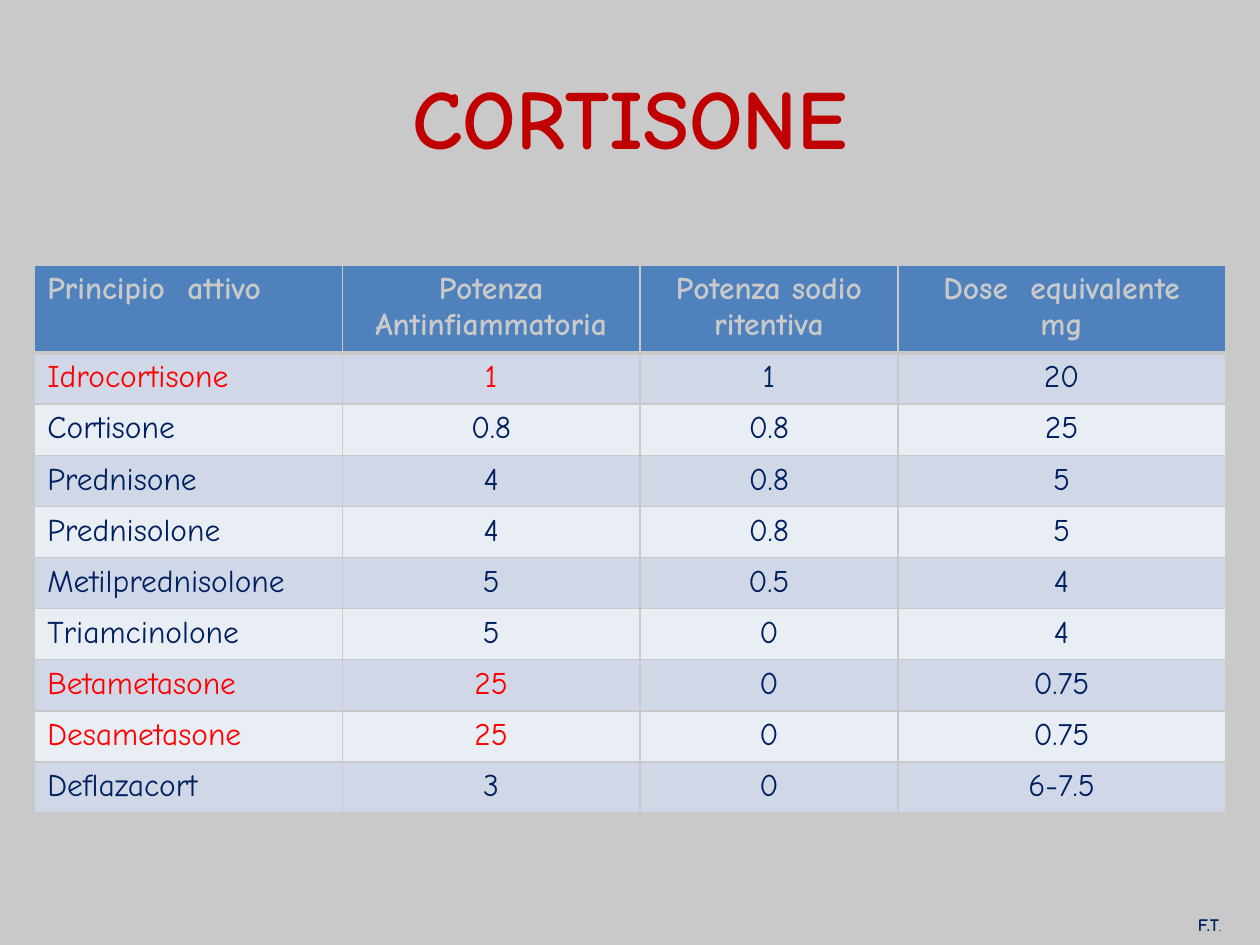
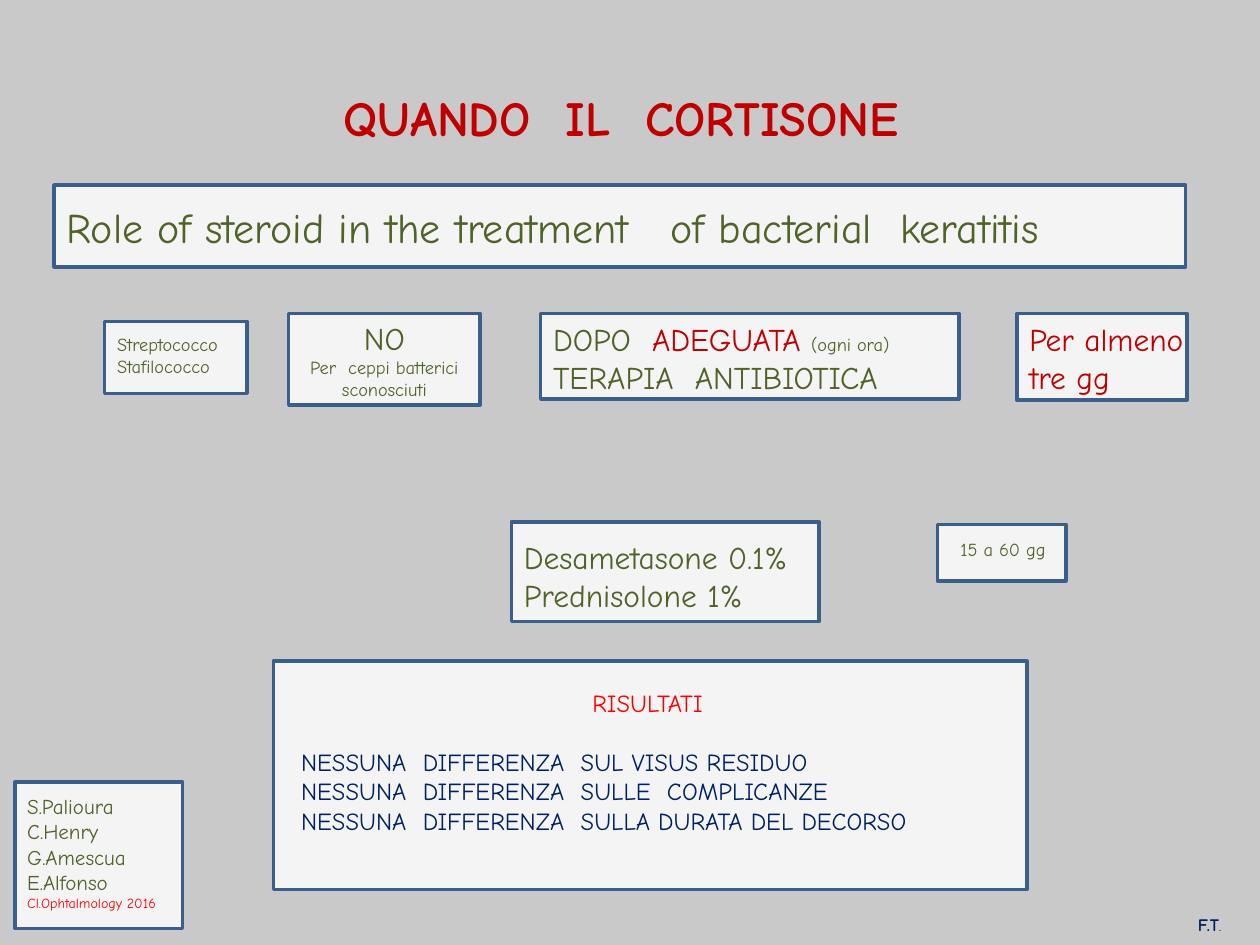
import lxml.etree
import pptx
import pptx.dml.color
import pptx.enum.shapes
import pptx.enum.text
import pptx.oxml.ns
import pptx.util

Cm = pptx.util.Cm
Pt = pptx.util.Pt
Align = pptx.enum.text.PP_ALIGN
Anchor = pptx.enum.text.MSO_ANCHOR
qn = pptx.oxml.ns.qn

FONT = "Comic Neue"
GREY, PALE, EDGE = "C9C9C9", "F4F4F4", "3A5F8C"
NAVY, GREEN, BRICK, RED, BLACK = "002060", "4F6228", "C00000", "FF0000", "000000"
HEAD, BANDS = "4F81BD", ("D0D8E8", "E9EDF4")

FOOT = [[("F.T", 10, NAVY, True), (".", 8, BLACK)]]

TITLES = [
    ("CORTISONE", 48, (7.11, 1.19, 11.18, 2.31)),
    ("QUANDO  IL  CORTISONE ", 28, (5.38, 1.63, 14.63, 1.45)),
]

DRUGS = [
    ("Principio  attivo", "Potenza Antinfiammatoria",
     "Potenza sodio ritentiva", "Dose  equivalente\nmg"),
    ("Idrocortisone", "1", "1", "20"),
    ("Cortisone", "0.8", "0.8", "25"),
    ("Prednisone", "4", "0.8", "5"),
    ("Prednisolone", "4", "0.8", "5"),
    ("Metilprednisolone", "5", "0.5", "4"),
    ("Triamcinolone", "5", "0", "4"),
    ("Betametasone", "25", "0", "0.75"),
    ("Desametasone", "25", "0", "0.75"),
    ("Deflazacort", "3", "0", "6-7.5"),
]
HOT = {"Idrocortisone", "Betametasone", "Desametasone"}
WIDTHS = (6.2, 6, 5.2, 6.6)
TALL, LOW = 1.75, 1.03


def plain(size, color, *lines):
    return [[(line, size, color)] for line in lines]


CARDS = [
    {"at": (0.3, 15.77, 3.38, 2.95), "top": 0.23,
     "text": plain(12, GREEN, "S.Palioura", "C.Henry", "G.Amescua", "E.Alfonso")
     + plain(8, RED, "Cl.Ophtalmology 2016")},
    {"at": (1.09, 3.73, 22.81, 1.65), "top": 0.33,
     "text": plain(24, GREEN,
                   "Role of steroid in the treatment   of bacterial  keratitis")},
    {"at": (2.11, 6.48, 2.87, 1.45), "top": 0.23,
     "text": plain(10.5, GREEN, "Streptococco", "Stafilococco")},
    {"at": (5.82, 6.32, 3.86, 1.85), "right": 0.25,
     "anchor": Anchor.MIDDLE, "mid": 3,
     "text": plain(18, GREEN, "NO")
     + plain(10.5, GREEN, "Per  ceppi batterici", "sconosciuti")},
    {"at": (10.9, 6.32, 8.43, 1.73),
     "text": [[("DOPO  ", 18, GREEN), ("ADEGUATA ", 18, BRICK),
               ("(ogni ora)", 10.5, GREEN)],
              [("TERAPIA  ANTIBIOTICA", 18, GREEN)]]},
    {"at": (20.5, 6.32, 3.43, 1.75),
     "text": plain(18, BRICK, "Per almeno", "tre gg")},
    {"at": (10.31, 10.52, 6.2, 2.01), "top": 0.33,
     "text": plain(18, GREEN, "Desametasone 0.1%", "Prednisolone 1%")},
    {"at": (18.9, 10.57, 2.59, 1.14), "left": 0.46, "top": 0.28,
     "text": plain(10.5, GREEN, "15 a 60 gg")},
    {"at": (5.51, 13.33, 15.19, 4.6), "left": 0.56, "right": 0.66,
     "top": 0.54, "mid": 1, "gap": 16.75,
     "text": plain(14, RED, "RISULTATI")
     + plain(14, NAVY, "NESSUNA  DIFFERENZA  SUL VISUS RESIDUO",
             "NESSUNA  DIFFERENZA  SULLE  COMPLICANZE",
             "NESSUNA  DIFFERENZA  SULLA DURATA DEL DECORSO")},
]


def hue(code):
    return pptx.dml.color.RGBColor.from_string(code)


def paint(fill, code):
    fill.solid()
    fill.fore_color.rgb = hue(code)


def style(run, size, color, bold=False):
    run.font.name = FONT
    run.font.size = Pt(size)
    run.font.bold = bold
    run.font.color.rgb = hue(color)


def write(frame, lines, mid=0, gap=0):
    frame.word_wrap = True
    for num, line in enumerate(lines):
        para = frame.add_paragraph() if num else frame.paragraphs[0]
        para.alignment = Align.CENTER if num < mid else Align.LEFT
        if gap and num == mid:
            para.space_before = Pt(gap)
        for text, *look in line:
            run = para.add_run()
            run.text = text
            style(run, *look)


def label(slide, at, lines, mid=0, anchor=Anchor.TOP):
    box = slide.shapes.add_textbox(*map(Cm, at))
    box.text_frame.vertical_anchor = anchor
    write(box.text_frame, lines, mid)


def start(deck, title, size, at):
    slide = deck.slides.add_slide(deck.slide_layouts[6])
    paint(slide.background.fill, GREY)
    label(slide, at, [[(title, size, BRICK, True)]], 1, Anchor.MIDDLE)
    label(slide, (23.9, 18.31, 1.22, 0.69), FOOT)
    return slide


def card(slide, at, text, left=0.25, right=0, top=0.13,
         anchor=Anchor.TOP, mid=0, gap=0):
    box = slide.shapes.add_shape(
        pptx.enum.shapes.MSO_SHAPE.RECTANGLE, *map(Cm, at))
    box.shadow.inherit = False
    paint(box.fill, PALE)
    box.line.color.rgb = hue(EDGE)
    box.line.width = Pt(2)
    frame = box.text_frame
    frame.margin_left, frame.margin_right = Cm(left), Cm(right)
    frame.margin_top = Cm(top)
    frame.vertical_anchor = anchor
    write(frame, text, mid, gap)


def border(cell, **sides):
    props = cell._tc.get_or_add_tcPr()
    for side, width in sides.items():
        line = lxml.etree.SubElement(props, qn("a:ln" + side), w=str(Pt(width)))
        fill = lxml.etree.SubElement(line, qn("a:solidFill"))
        lxml.etree.SubElement(fill, qn("a:srgbClr"), val=GREY)


def chart_drugs(slide):
    high = TALL + LOW * (len(DRUGS) - 1)
    grid = slide.shapes.add_table(
        len(DRUGS), len(WIDTHS), Cm(0.7), Cm(5.34),
        Cm(sum(WIDTHS)), Cm(high)).table
    grid.horz_banding = False
    for col, width in zip(grid.columns, WIDTHS):
        col.width = Cm(width)
    for num, drug in enumerate(DRUGS):
        top = num == 0
        grid.rows[num].height = Cm(TALL if top else LOW)
        for pos, text in enumerate(drug):
            cell = grid.cell(num, pos)
            border(cell, L=1, R=1, T=3 if num == 1 else 1, B=3 if top else 1)
            paint(cell.fill, HEAD if top else BANDS[(num - 1) % 2])
            hot = drug[0] in HOT and pos < 2
            color = GREY if top else RED if hot else NAVY
            cell.text_frame.text = text
            for para in cell.text_frame.paragraphs:
                para.alignment = Align.CENTER if pos else Align.LEFT
                for run in para.runs:
                    style(run, 18, color, top)


def main():
    deck = pptx.Presentation()
    deck.slide_width, deck.slide_height = Cm(25.4), Cm(19.05)
    first, second = [start(deck, *title) for title in TITLES]
    chart_drugs(first)
    for item in CARDS:
        card(second, **item)
    deck.save("out.pptx")


if __name__ == "__main__":
    main()
